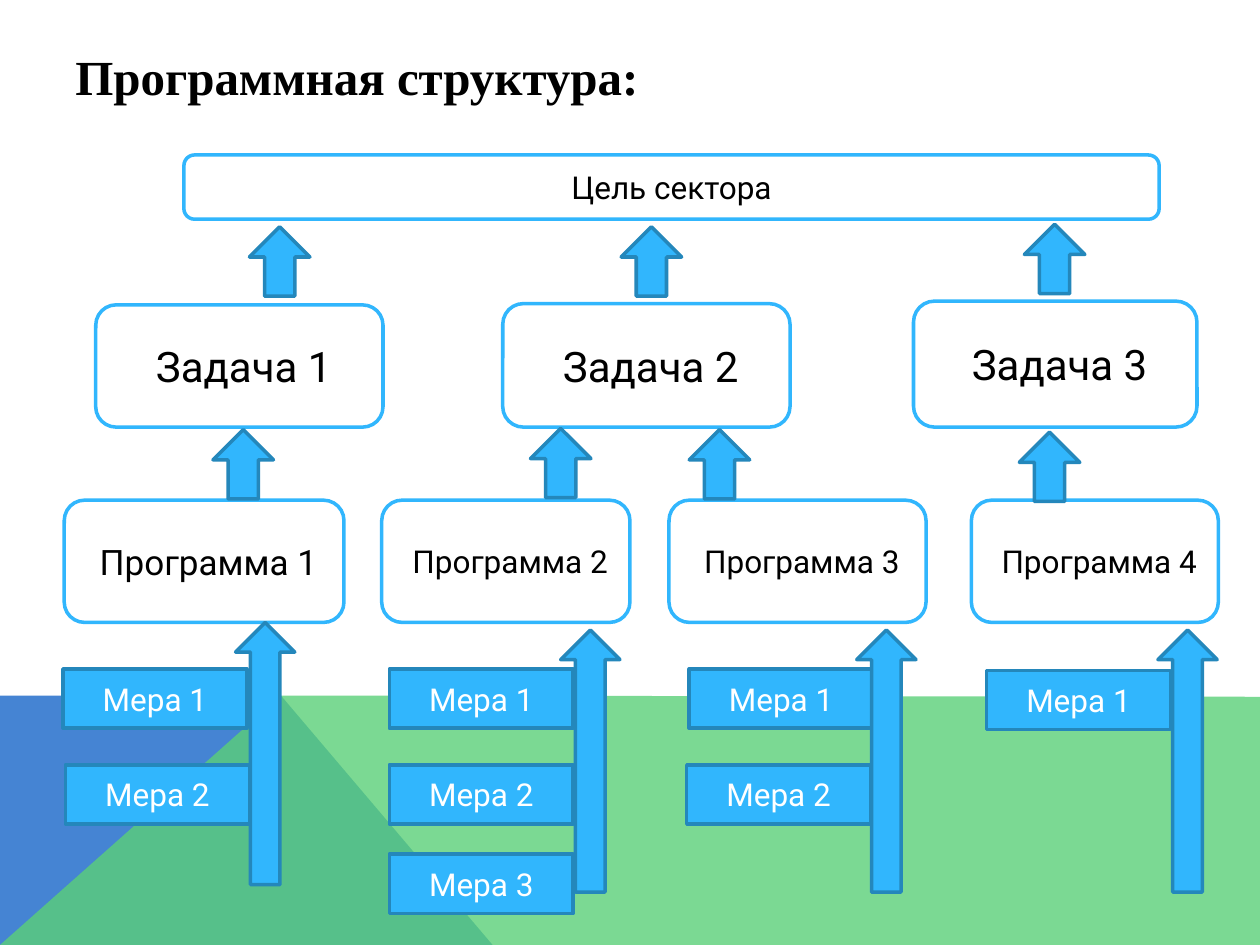
from dataclasses import dataclass

from lxml import etree
from pptx import Presentation
from pptx import util as u
from pptx.dml.color import RGBColor
from pptx.enum import shapes, text
from pptx.oxml.ns import qn

PX = 9144  # EMU in one px, 100 px to the inch


@dataclass(frozen=True)
class Theme:
    blue: str = "31B6FD"
    edge: str = "2487BB"
    white: str = "FFFFFF"
    black: str = "000000"
    band_blue: str = "4584D3"
    band_green: str = "5BD078"
    body_font: str = "Roboto"
    title_font: str = "Times New Roman"
    title_size: int = 28
    task_size: int = 24
    large_size: int = 20
    label_size: int = 18
    line_width: int = 2


class SlideBuilder:
    def __init__(self, deck, theme):
        self.theme = theme
        self.slide = deck.slides.add_slide(deck.slide_layouts[6])

    def paint(self, shape, fill, line=None):
        shape.shadow.inherit = False
        shape.fill.solid()
        shape.fill.fore_color.rgb = RGBColor.from_string(fill)
        if line:
            shape.line.color.rgb = RGBColor.from_string(line)
            shape.line.width = u.Pt(self.theme.line_width)
        else:
            shape.line.fill.background()

    def label(self, box, words, size, color, font=None, bold=False,
              align=text.PP_ALIGN.CENTER, indent=0):
        frame = box.text_frame
        frame.word_wrap = True
        frame.vertical_anchor = text.MSO_ANCHOR.MIDDLE
        para = frame.paragraphs[0]
        para.alignment = align
        if indent:
            para._p.get_or_add_pPr().set("marL", str(indent * PX))
        span = para.add_run()
        span.text = words
        span.font.size = u.Pt(size)
        span.font.name = font or self.theme.body_font
        span.font.bold = bold
        span.font.color.rgb = RGBColor.from_string(color)

    def preset(self, kind, x, y, width, height, fill, line):
        shape = self.slide.shapes.add_shape(
            kind, x * PX, y * PX, width * PX, height * PX)
        self.paint(shape, fill, line)
        return shape

    def band(self, points, fill, opacity=100):
        builder = self.slide.shapes.build_freeform(*points[0], scale=PX)
        builder.add_line_segments(points[1:], close=True)
        shape = builder.convert_to_shape()
        self.paint(shape, fill)
        if opacity < 100:
            color = shape._element.spPr.find(".//" + qn("a:srgbClr"))
            etree.SubElement(color, qn("a:alpha")).set("val", str(opacity * 1000))

    def title(self, words, x, y, width, height):
        box = self.slide.shapes.add_textbox(x * PX, y * PX, width * PX, height * PX)
        self.label(box, words, self.theme.title_size, self.theme.black,
                   self.theme.title_font, True, text.PP_ALIGN.LEFT)

    def card(self, words, x, y, width, height, size, indent=7):
        box = self.preset(shapes.MSO_SHAPE.ROUNDED_RECTANGLE, x, y, width, height,
                          self.theme.white, self.theme.blue)
        self.label(box, words, size, self.theme.black, indent=indent)

    def measure(self, words, x, y):
        box = self.preset(shapes.MSO_SHAPE.RECTANGLE, x, y, 146, 47,
                          self.theme.blue, self.theme.edge)
        self.label(box, words, self.theme.label_size, self.theme.white)

    def arrow(self, x, y, width=48, height=55):
        self.preset(shapes.MSO_SHAPE.UP_ARROW, x, y, width, height,
                    self.theme.blue, self.theme.edge)


def main():
    theme = Theme()
    deck = Presentation()
    deck.slide_width, deck.slide_height = 1000 * PX, 750 * PX
    page = SlideBuilder(deck, theme)

    # Coloured bands at the foot
    page.band([(0, 750), (0, 552), (223, 552), (391, 750)], theme.band_blue)
    page.band([(0, 750), (223, 552), (1000, 553), (1000, 750)], theme.band_green, 80)

    # Title and sector goal
    page.title("Программная структура:", 50, 29, 900, 62)
    page.card("Цель сектора", 146, 123, 774, 51, theme.label_size, indent=0)

    # Tasks
    tasks = [(76, 242, 228, 97), (399, 241, 228, 98), (725, 239, 225, 100)]
    for number, place in enumerate(tasks, 1):
        page.card(f"Задача {number}", *place, theme.task_size)

    # Programmes: left, width, text size
    programmes = [(51, 222, theme.large_size), (303, 197, theme.label_size),
                  (531, 204, theme.label_size), (771, 196, theme.label_size)]
    for number, (x, width, size) in enumerate(programmes, 1):
        page.card(f"Программа {number}", x, 397, width, 97, size)

    # Measures under each programme
    measures = [[(50, 531), (52, 607)], [(309, 531), (309, 607), (309, 678)],
                [(547, 531), (545, 607)], [(783, 532)]]
    for column in measures:
        for number, place in enumerate(column, 1):
            page.measure(f"Мера {number}", *place)

    # Long arrows: measures to programmes
    for x, y in [(187, 494), (445, 500), (680, 500), (919, 500)]:
        page.arrow(x, y, 47, 208)

    # Short arrows: programmes to tasks, then tasks to the goal
    for place in [(169, 341), (421, 340), (547, 341), (809, 343),
                  (198, 180), (493, 180), (813, 178)]:
        page.arrow(*place)

    deck.save("out.pptx")


if __name__ == "__main__":
    main()
